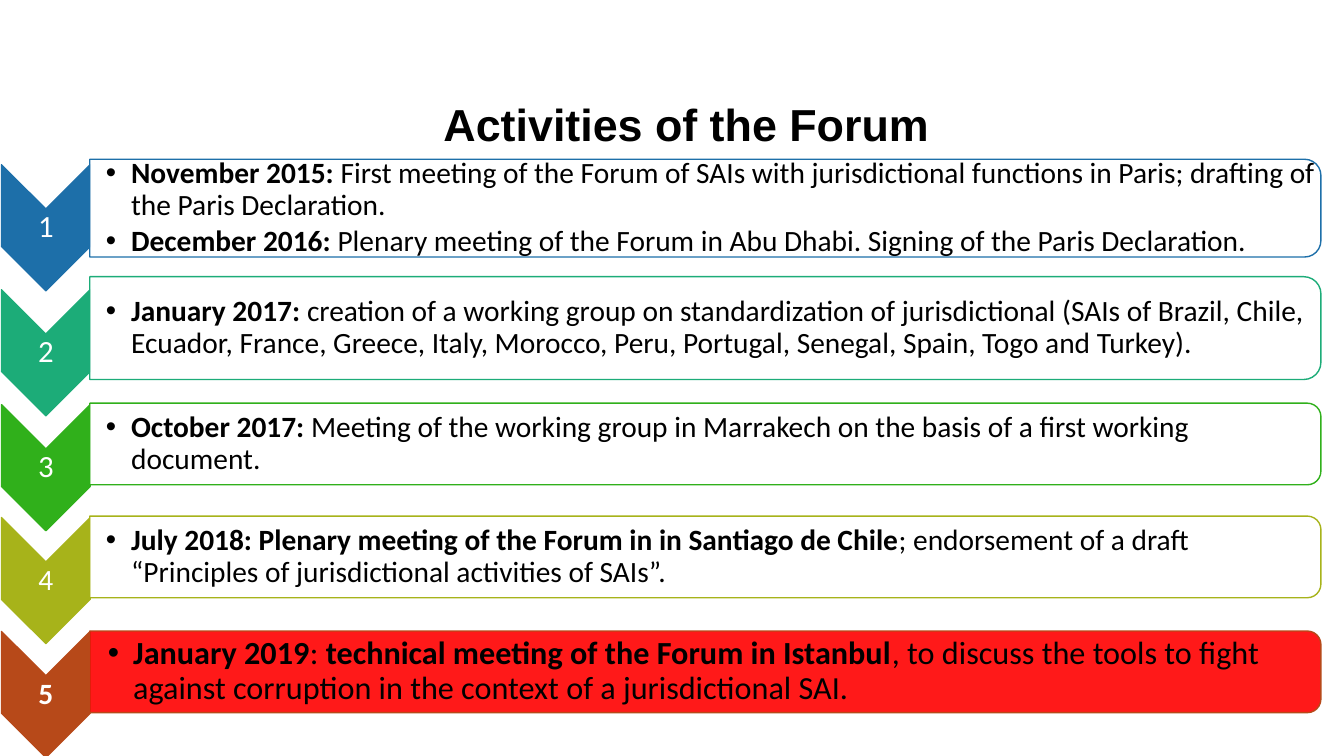
from dataclasses import dataclass

from lxml import etree
from pptx import Presentation
from pptx.dml.color import RGBColor
from pptx.enum.shapes import MSO_SHAPE
from pptx.enum.text import MSO_ANCHOR, MSO_AUTO_SIZE, PP_ALIGN
from pptx.oxml.ns import qn
from pptx.util import Inches, Pt

CHEVRON = MSO_SHAPE.CHEVRON
PANEL = MSO_SHAPE.ROUND_2_SAME_RECTANGLE
MIDDLE = MSO_ANCHOR.MIDDLE
CENTER = PP_ALIGN.CENTER
GROW = MSO_AUTO_SIZE.SHAPE_TO_FIT_TEXT

WHITE = RGBColor(0xFF, 0xFF, 0xFF)
BLACK = RGBColor(0x00, 0x00, 0x00)
RED = RGBColor(0xFF, 0x00, 0x00)
BLUE = RGBColor(0x1D, 0x6F, 0xA9)
TEAL = RGBColor(0x1C, 0xAC, 0x78)
GREEN = RGBColor(0x30, 0xB0, 0x1B)
OLIVE = RGBColor(0xA7, 0xB3, 0x1A)
RUST = RGBColor(0xB7, 0x49, 0x19)

SLIDE_WIDTH = Inches(13.33)
SLIDE_HEIGHT = Inches(7.5)
COLUMN = SLIDE_WIDTH / 100
ROW = SLIDE_HEIGHT / 100

CHEVRON_CENTER = 3.41
CHEVRON_WIDTH = 6.6
CHEVRON_HEIGHT = 16.67
NUMBER_HEIGHT = 5.07
PANEL_LEFT = 6.68
PANEL_WIDTH = 91.6
TEXT_WIDTH = 91.3
TEXT_MARGIN = 1.1


@dataclass(frozen=True)
class Span:
    text: str
    bold: bool = False


@dataclass(frozen=True)
class Step:
    color: RGBColor
    chevron_middle: float
    panel_middle: float
    panel_height: float
    items: list[list[Span]]
    fill: RGBColor = WHITE
    size: int = 21
    number_size: int = 22
    number_bold: bool = False
    inset: float = 0.16


STEPS = [
    Step(BLUE, 30.13, 27.53, 12.93, [
        [Span("November 2015: ", True),
         Span("First meeting of the Forum of SAIs with jurisdictional functions "
              "in Paris; drafting of the Paris Declaration.")],
        [Span("December 2016: ", True),
         Span("Plenary meeting of the Forum in Abu Dhabi. Signing of the Paris Declaration.")],
    ]),
    Step(TEAL, 46.67, 43.4, 13.6, [
        [Span("January 2017: ", True),
         Span("creation of a working group on standardization of jurisdictional "
              "(SAIs of Brazil, Chile, Ecuador, France, Greece, Italy, Morocco, Peru, "
              "Portugal, Senegal, Spain, Togo and Turkey).")],
    ]),
    Step(GREEN, 61.87, 58.73, 10.8, [
        [Span("October 2017: ", True),
         Span("Meeting of the working group in Marrakech on the basis of a first "
              "working document.")],
    ]),
    Step(OLIVE, 76.8, 73.67, 10.8, [
        [Span("July 2018: Plenary meeting of the Forum in in Santiago de Chile", True),
         Span("; endorsement of a draft “Principles of jurisdictional activities of SAIs”.")],
    ], number_size=21),
    Step(RUST, 91.87, 88.87, 10.8, [
        [Span("January 2019", True),
         Span(": "),
         Span("technical meeting of the Forum in Istanbul", True),
         Span(", to discuss the tools to fight against corruption in the context "
              "of a jurisdictional SAI.")],
    ], fill=RED, size=23, number_size=21, number_bold=True, inset=0.18),
]


def add_turned_shape(page, kind, center: float, middle: float, width: float,
                     height: float, fill: RGBColor, line: RGBColor):
    long_side, short_side = height * ROW, width * COLUMN
    shape = page.shapes.add_shape(
        kind, round(center * COLUMN - long_side / 2), round(middle * ROW - short_side / 2),
        round(long_side), round(short_side))
    shape.rotation = 90
    shape.shadow.inherit = False
    shape.fill.solid()
    shape.fill.fore_color.rgb = fill
    shape.line.color.rgb = line
    shape.line.width = Pt(1)
    return shape


def add_box(page, left: float, middle: float, width: float, height: float):
    box = page.shapes.add_textbox(
        round(left * COLUMN), round((middle - height / 2) * ROW),
        round(width * COLUMN), round(height * ROW))
    box.text_frame.word_wrap = True
    return box.text_frame


def set_insets(frame, left: float, rest: float) -> None:
    frame.vertical_anchor = MIDDLE
    frame.margin_left = Inches(left)
    frame.margin_top = frame.margin_right = frame.margin_bottom = Inches(rest)


def add_span(para, span: Span, size: int, color: RGBColor, font: str = "Calibri") -> None:
    run = para.add_run()
    run.text = span.text
    run.font.name = font
    run.font.size = Pt(size)
    run.font.bold = span.bold
    run.font.color.rgb = color


def add_bullet(para) -> None:
    properties = para._p.get_or_add_pPr()
    properties.set("marL", str(Inches(0.25)))
    properties.set("indent", str(Inches(-0.25)))
    etree.SubElement(properties, qn("a:buFont")).set("typeface", "Arial")
    etree.SubElement(properties, qn("a:buChar")).set("char", "•")


def draw_step(page, number: int, step: Step) -> None:
    add_turned_shape(page, CHEVRON, CHEVRON_CENTER, step.chevron_middle,
                     CHEVRON_WIDTH, CHEVRON_HEIGHT, step.color, step.color)
    frame = add_box(page, CHEVRON_CENTER - CHEVRON_WIDTH / 2, step.chevron_middle,
                    CHEVRON_WIDTH, NUMBER_HEIGHT)
    set_insets(frame, 0.02, 0.02)
    para = frame.paragraphs[0]
    para.alignment = CENTER
    para.line_spacing = 0.9
    add_span(para, Span(str(number), step.number_bold), step.number_size, WHITE)

    panel = add_turned_shape(page, PANEL, PANEL_LEFT + PANEL_WIDTH / 2, step.panel_middle,
                             PANEL_WIDTH, step.panel_height, step.fill, step.color)
    color = panel.fill._xPr.find(qn("a:solidFill"))[0]
    etree.SubElement(color, qn("a:alpha")).set("val", "90000")
    frame = add_box(page, PANEL_LEFT, step.panel_middle, TEXT_WIDTH,
                    step.panel_height - TEXT_MARGIN)
    set_insets(frame, step.inset, 0.01)
    for index, spans in enumerate(step.items):
        para = frame.add_paragraph() if index else frame.paragraphs[0]
        para.level = 1
        para.line_spacing = 0.9
        para.space_after = Pt(3)
        add_bullet(para)
        for span in spans:
            add_span(para, span, step.size, BLACK)


def draw_title(page) -> None:
    frame = add_box(page, 20.48, 16.4, 61.2, 8.53)
    frame.auto_size = GROW
    para = frame.paragraphs[0]
    para.alignment = CENTER
    add_span(para, Span("Activities of the Forum", True), 32, BLACK, "Arial")


def main() -> None:
    deck = Presentation()
    deck.slide_width = SLIDE_WIDTH
    deck.slide_height = SLIDE_HEIGHT
    page = deck.slides.add_slide(deck.slide_layouts[6])
    for number, step in enumerate(STEPS, start=1):
        draw_step(page, number, step)
    draw_title(page)
    deck.save("out.pptx")


if __name__ == "__main__":
    main()
